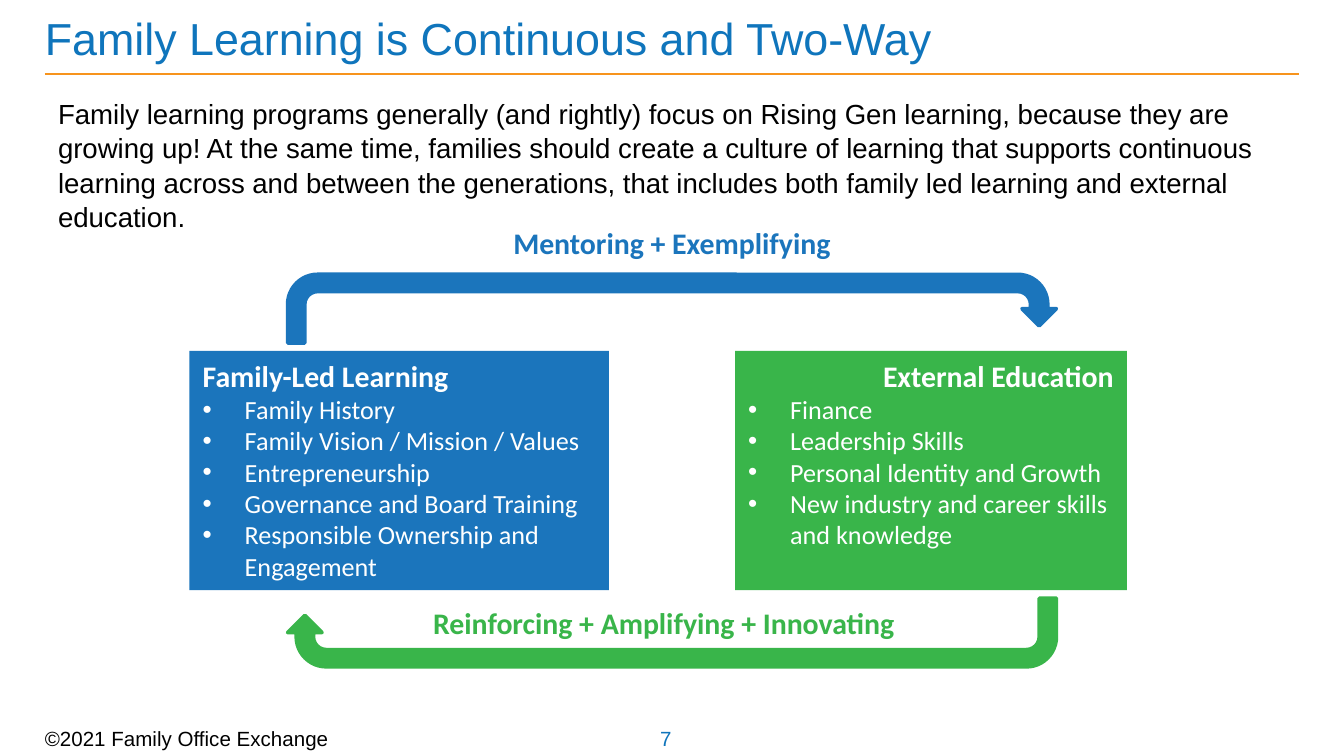
from dataclasses import dataclass

from lxml.etree import SubElement
from pptx import Presentation
from pptx.dml.color import RGBColor
from pptx.enum.shapes import MSO_CONNECTOR, MSO_SHAPE
from pptx.enum.text import MSO_ANCHOR, PP_ALIGN
from pptx.oxml.ns import qn
from pptx.util import Pt


@dataclass(frozen=True)
class Theme:
    """Colours, fonts and type sizes."""

    title: str = "0F75BC"
    rule: str = "F7941D"
    blue: str = "1B75BC"
    green: str = "39B54A"
    black: str = "000000"
    white: str = "FFFFFF"
    sans: str = "Arial"
    face: str = "Calibri"
    head: float = 24
    body: float = 14.8
    label: float = 16
    item: float = 14
    small: float = 11


class Deck:
    """Draws styled elements on the current slide."""

    def __init__(self, theme, slide):
        """Keep the theme and the slide."""
        self.theme = theme
        self.slide = slide

    def font(self, para, name, size, color, bold=False):
        """Format every run of a paragraph."""
        for run in para.runs:
            run.font.name = name
            run.font.size = Pt(size)
            run.font.bold = bold
            run.font.color.rgb = RGBColor.from_string(color)

    def text(self, area, words, name, size, color, bold=False, align=PP_ALIGN.LEFT,
             anchor=MSO_ANCHOR.TOP, inset=(7.2, 3.6), wrap=True, space=1):
        """Add a one-paragraph text box."""
        frame = self.slide.shapes.add_textbox(*map(Pt, area)).text_frame
        frame.word_wrap = wrap
        frame.vertical_anchor = anchor
        frame.margin_left = Pt(inset[0])
        frame.margin_top = frame.margin_bottom = Pt(inset[1])
        frame.text = words
        para = frame.paragraphs[0]
        para.alignment = align
        para.line_spacing = space
        self.font(para, name, size, color, bold)

    def small(self, area, words, color, align=PP_ALIGN.LEFT):
        """Add a line of footer text."""
        self.text(area, words, self.theme.sans, self.theme.small, color, align=align,
                  anchor=MSO_ANCHOR.MIDDLE, inset=(0, 0), wrap=False)

    def label(self, area, words, color):
        """Add a bold centred label for an arrow."""
        self.text(area, words, self.theme.face, self.theme.label, color, True,
                  PP_ALIGN.CENTER)

    def rule(self, left, right, top):
        """Add a thin horizontal line."""
        line = self.slide.shapes.add_connector(
            MSO_CONNECTOR.STRAIGHT, Pt(left), Pt(top), Pt(right), Pt(top))
        line.line.color.rgb = RGBColor.from_string(self.theme.rule)
        line.line.width = Pt(1)
        SubElement(line._element.spPr, qn("a:effectLst"))

    def shape(self, kind, area, color):
        """Add a flat filled shape."""
        shape = self.slide.shapes.add_shape(kind, *map(Pt, area))
        shape.shadow.inherit = False
        shape.fill.solid()
        shape.fill.fore_color.rgb = RGBColor.from_string(color)
        shape.line.fill.background()
        return shape

    def card(self, area, color, head, items, align=PP_ALIGN.LEFT):
        """Add a filled box with a heading and bullets."""
        theme = self.theme
        frame = self.shape(MSO_SHAPE.RECTANGLE, area, color).text_frame
        frame.word_wrap = True
        frame.vertical_anchor = MSO_ANCHOR.TOP
        frame.text = head
        first = frame.paragraphs[0]
        first.alignment = align
        self.font(first, theme.face, theme.label, theme.white, True)
        for item in items:
            para = frame.add_paragraph()
            para.text = item
            para.alignment = PP_ALIGN.LEFT
            props = para._p.get_or_add_pPr()
            props.set("marL", str(Pt(22.5)))
            props.set("indent", str(-Pt(22.5)))
            SubElement(props, qn("a:buFont"), typeface=theme.sans)
            SubElement(props, qn("a:buChar"), char="•")
            self.font(para, theme.face, theme.item, theme.white)

    def turn(self, area, color, angle=0):
        """Add a U-turn arrow."""
        arrow = self.shape(MSO_SHAPE.U_TURN_ARROW, area, color)
        arrow.line.color.rgb = RGBColor.from_string(color)
        arrow.line.width = Pt(2)
        arrow.rotation = angle


def main():
    """Build and save the slide."""
    show = Presentation()
    show.slide_width, show.slide_height = Pt(720), Pt(405)
    theme = Theme()
    deck = Deck(theme, show.slides.add_slide(show.slide_layouts[6]))

    deck.rule(24, 696, 39.8)
    deck.small((353.5, 389, 13.5, 13.5), "7", theme.title, PP_ALIGN.CENTER)
    deck.small((24, 391, 180, 9.4), "©2021 Family Office Exchange", theme.black)
    deck.text((24, 3, 583, 34.5), "Family Learning is Continuous and Two-Way",
              theme.sans, theme.head, theme.title,
              anchor=MSO_ANCHOR.MIDDLE, inset=(0, 3.6))
    deck.text((24, 47.5, 672, 68.4),
              "Family learning programs generally (and rightly) focus on Rising Gen "
              "learning, because they are growing up! At the same time, families should "
              "create a culture of learning that supports continuous learning across and "
              "between the generations, that includes both family led learning and "
              "external education.",
              theme.sans, theme.body, theme.black, space=1.04)

    deck.card((101.5, 188, 224.7, 128.2), theme.blue, "Family-Led Learning",
              ["Family History", "Family Vision / Mission / Values", "Entrepreneurship",
               "Governance and Board Training", "Responsible Ownership and Engagement"])
    deck.card((393.8, 188, 210, 128.2), theme.green, "External Education",
              ["Finance", "Leadership Skills", "Personal Identity and Growth",
               "New industry and career skills and knowledge"], PP_ALIGN.RIGHT)

    deck.label((112.3, 116.6, 495.4, 26.6), "Mentoring + Exemplifying", theme.blue)
    deck.label((108, 320.6, 495.4, 26.6), "Reinforcing + Amplifying + Innovating",
               theme.green)
    deck.turn((154.1, 147, 411.8, 36.7), theme.blue)
    deck.turn((154.1, 320.5, 411.8, 36.7), theme.green, 180)
    show.save("out.pptx")


if __name__ == "__main__":
    main()
